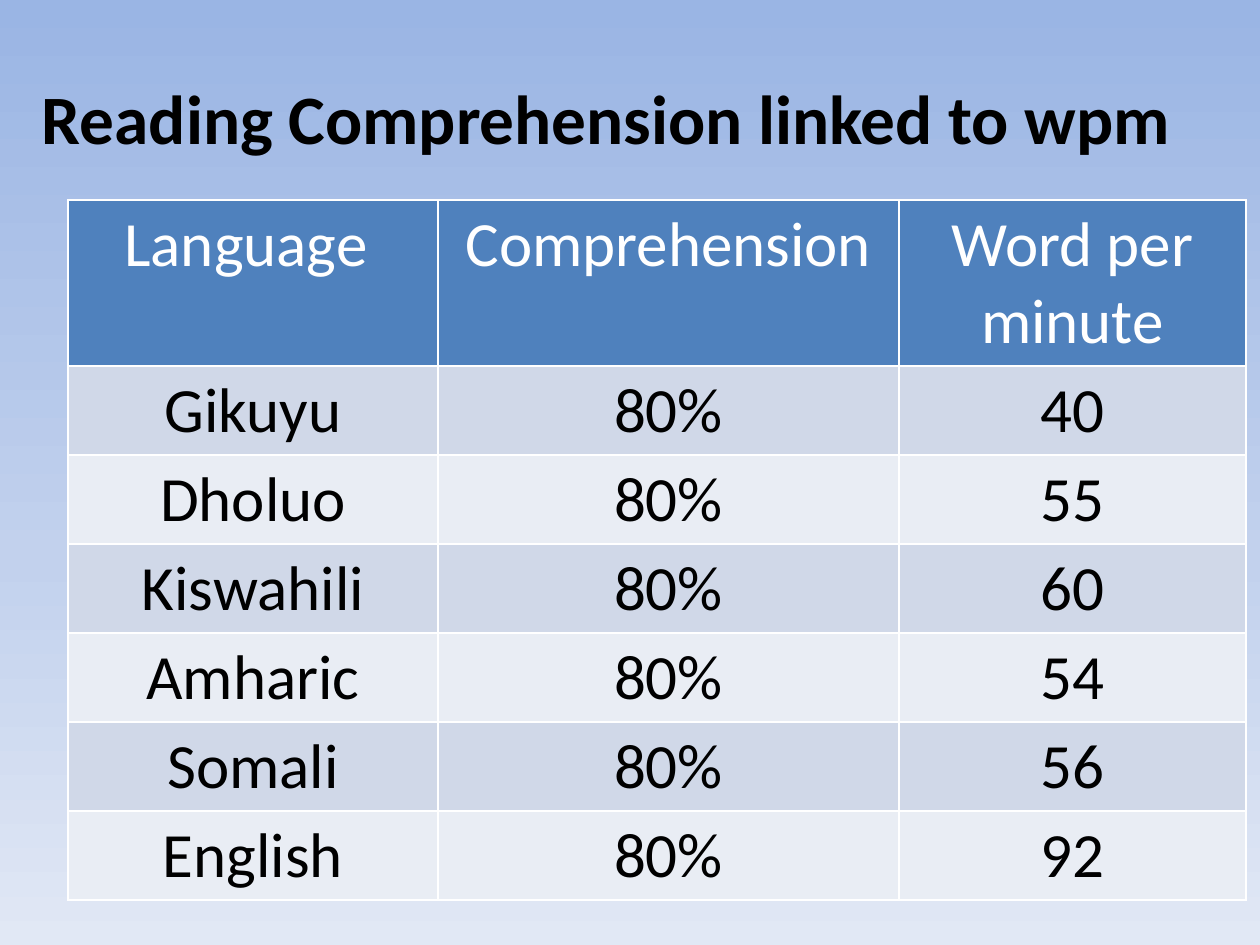
from lxml import etree
from pptx import Presentation
from pptx import util as u
from pptx.dml.color import RGBColor
from pptx.enum import text
from pptx.oxml.ns import qn

SCALE = 914400 / 126
COLORS = {
    "title": "000000",
    "body": "000000",
    "head_text": "FFFFFF",
    "head_fill": "4F81BD",
    "odd_row": "D0D8E8",
    "even_row": "E9EDF4",
    "border": "FFFFFF",
}
BACKGROUND_STOPS = [(0, "9AB5E4"), (59, "C2D1ED"), (100, "E1E8F5")]
COLUMN_WIDTHS = [370, 461, 347]
HEAD_HEIGHT, ROW_HEIGHT = 166, 89
HEADINGS = ("Language ", "Comprehension", "Word per minute")
READING_SPEEDS = [
    ("Gikuyu", "80%", "40"),
    ("Dholuo", "80%", "55"),
    ("Kiswahili", "80%", "60"),
    ("Amharic", "80%", "54"),
    ("Somali", "80%", "56"),
    ("English", "80%", "92"),
]


def px(length):
    return u.Emu(round(length * SCALE))


def add_color(parent, color):
    etree.SubElement(parent, qn("a:srgbClr"), val=COLORS.get(color, color))


def set_background(slide):
    fill = slide.background.fill
    fill.gradient()
    fill.gradient_angle = 270
    stop_list = next(slide.element.iter(qn("a:gsLst")))
    for stop in list(stop_list):
        stop_list.remove(stop)
    for percent, color in BACKGROUND_STOPS:
        stop = etree.SubElement(stop_list, qn("a:gs"), pos=str(percent * 1000))
        add_color(stop, color)


def write_text(frame, content, color, **formats):
    paragraph = frame.paragraphs[0]
    paragraph.alignment = text.PP_ALIGN.CENTER
    run = paragraph.add_run()
    run.text = content
    for name, value in {"name": "Calibri", **formats}.items():
        setattr(run.font, name, value)
    run.font.color.rgb = RGBColor.from_string(COLORS[color])


def add_title(slide, content):
    shape = slide.shapes.add_textbox(px(16), px(38), px(1181), px(158))
    frame = shape.text_frame
    frame.word_wrap = True
    frame.vertical_anchor = text.MSO_ANCHOR.MIDDLE
    write_text(frame, content, "title", size=u.Pt(39.6), bold=True)


def set_borders(cell):
    properties = cell._tc.get_or_add_tcPr()
    for index, side in enumerate(("lnL", "lnR", "lnT", "lnB")):
        line = etree.Element(qn(f"a:{side}"), w=str(u.Pt(1)))
        add_color(etree.SubElement(line, qn("a:solidFill")), "border")
        properties.insert(index, line)


def fill_cell(cell, content, text_color, fill_color):
    write_text(cell.text_frame, content, text_color, size=u.Pt(36))
    cell.fill.solid()
    cell.fill.fore_color.rgb = RGBColor.from_string(COLORS[fill_color])
    set_borders(cell)


def add_reading_table(slide):
    rows = [HEADINGS, *READING_SPEEDS]
    height = HEAD_HEIGHT + ROW_HEIGHT * len(READING_SPEEDS)
    table = slide.shapes.add_table(
        len(rows), len(HEADINGS), px(68), px(200), px(sum(COLUMN_WIDTHS)), px(height)
    ).table
    for column, width in zip(table.columns, COLUMN_WIDTHS):
        column.width = px(width)
    for index, values in enumerate(rows):
        table.rows[index].height = px(ROW_HEIGHT if index else HEAD_HEIGHT)
        band = "odd_row" if index % 2 else "even_row"
        colors = ("body", band) if index else ("head_text", "head_fill")
        for cell, value in zip(table.rows[index].cells, values):
            fill_cell(cell, value, *colors)


def main():
    presentation = Presentation()
    presentation.slide_width, presentation.slide_height = px(1260), px(945)
    slide = presentation.slides.add_slide(presentation.slide_layouts[6])
    set_background(slide)
    add_title(slide, "Reading Comprehension linked to wpm")
    add_reading_table(slide)
    presentation.save("out.pptx")


if __name__ == "__main__":
    main()
